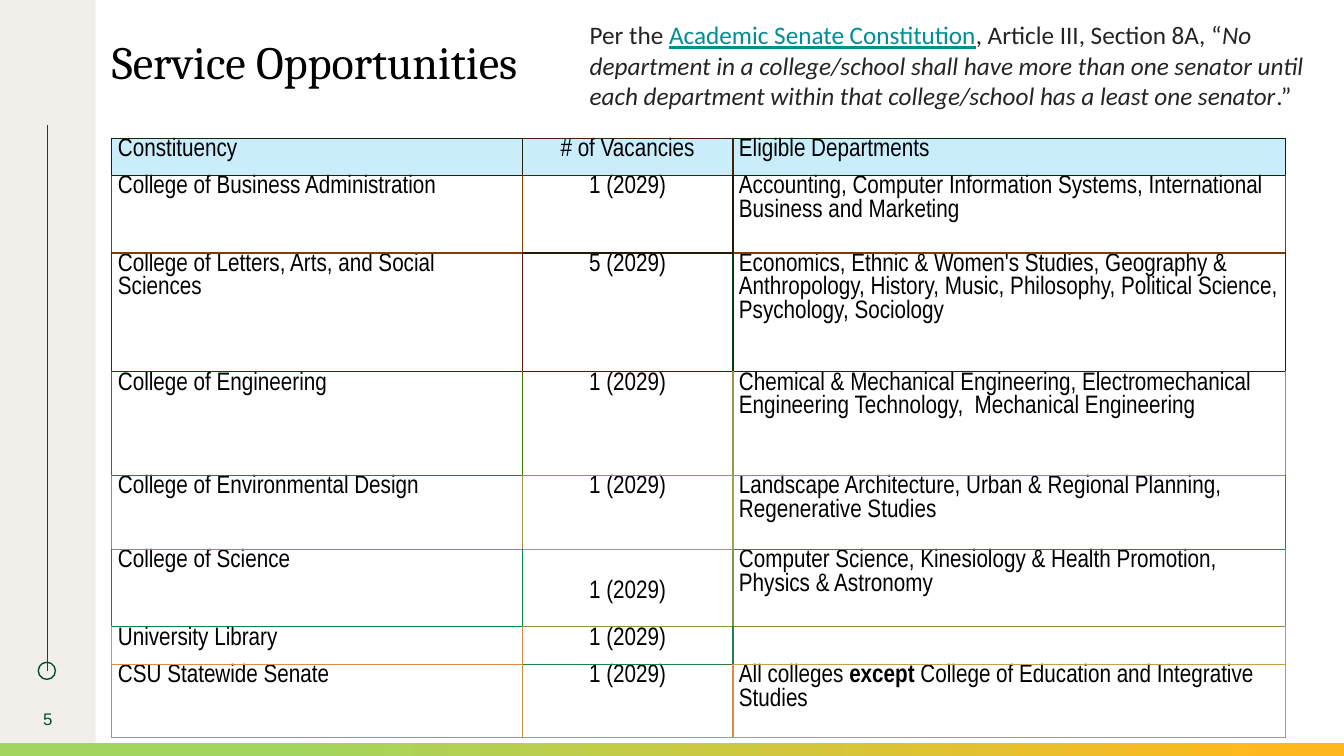
from lxml import etree
from pptx import Presentation
from pptx.dml.color import RGBColor
from pptx.enum.shapes import MSO_CONNECTOR, MSO_SHAPE
from pptx.enum.text import MSO_ANCHOR, MSO_AUTO_SIZE, PP_ALIGN
from pptx.oxml.ns import qn
from pptx.util import Inches, Pt

LEFT, CENTER = PP_ALIGN.LEFT, PP_ALIGN.CENTER
TOP, MIDDLE = MSO_ANCHOR.TOP, MSO_ANCHOR.MIDDLE
GROW = MSO_AUTO_SIZE.SHAPE_TO_FIT_TEXT
RECT, OVAL = MSO_SHAPE.RECTANGLE, MSO_SHAPE.OVAL
STRAIGHT = MSO_CONNECTOR.STRAIGHT
TITLE_ONLY = 5

COLORS = {
    "black": "000000", "white": "FFFFFF", "sand": "F2EEE9", "green": "005030",
    "gold": "FFB81C", "lime": "A3D65E", "header": "CAEDFB", "ink": "242424",
    "link": "008E95",
}
FORMATS = {
    "title": {"name": "Cambria", "size": Pt(33), "color": "black"},
    "number": {"name": "Arial", "size": Pt(12), "color": "green"},
    "cell": {"name": "Arial Narrow", "size": Pt(18), "bold": False, "color": "black"},
    "note": {"name": "Calibri", "size": Pt(18), "color": "ink"},
}


class SlideBuilder:
    """Holds the style and the current slide."""

    def __init__(self, slide):
        self.slide = slide
        self.shapes = slide.shapes

    def rgb(self, color):
        return RGBColor.from_string(COLORS[color])

    def set_text(self, frame, runs, style, align=LEFT, anchor=TOP, margins=(0, 0), **options):
        """Fill a text frame or cell with (text, extra format) runs."""
        side, end = (Inches(margin) for margin in margins)
        settings = {"margin_left": side, "margin_right": side, "margin_top": end,
                    "margin_bottom": end, "vertical_anchor": anchor, **options}
        for attribute, value in settings.items():
            setattr(frame, attribute, value)
        text_frame = getattr(frame, "text_frame", frame)
        text_frame.word_wrap = True
        paragraph = text_frame.paragraphs[0]
        paragraph.alignment = align
        for text, extra in runs:
            if text.startswith("\n"):
                paragraph.add_line_break()
            run = paragraph.add_run()
            run.text = text.lstrip("\n")
            self.format_font(run.font, {**FORMATS[style], **extra})
        return paragraph

    def format_font(self, font, values):
        for attribute, value in values.items():
            if attribute == "color":
                font.color.rgb = self.rgb(value)
            else:
                setattr(font, attribute, value)

    def title(self, box, text):
        placeholder = self.shapes.title
        for attribute, value in zip(("left", "top", "width", "height"), box):
            setattr(placeholder, attribute, Inches(value))
        paragraph = self.set_text(placeholder.text_frame, [(text, {})], "title", auto_size=GROW)
        paragraph.line_spacing = 0.9

    def shape(self, kind, box, fill=None, line=None):
        shape = self.shapes.add_shape(kind, *map(Inches, box))
        shape.shadow.inherit = False
        if fill:
            shape.fill.solid()
            shape.fill.fore_color.rgb = self.rgb(fill)
        else:
            shape.fill.background()
        if line:
            shape.line.color.rgb = self.rgb(line)
            shape.line.width = Pt(1)
        else:
            shape.line.fill.background()
        return shape

    def gradient_bar(self, box, stops):
        bar = self.shape(RECT, box)
        bar.fill.gradient()
        bar.fill.gradient_angle = 180
        for stop, (position, color) in zip(bar.fill.gradient_stops, stops):
            stop.position = position
            stop.color.rgb = self.rgb(color)

    def line(self, start, end, color):
        line = self.shapes.add_connector(STRAIGHT, *map(Inches, (*start, *end)))
        line.line.color.rgb = self.rgb(color)
        line.line.width = Pt(1)
        etree.SubElement(line._element.spPr, qn("a:effectLst"))

    def text(self, box, runs, style, **options):
        text_box = self.shapes.add_textbox(*map(Inches, box))
        self.set_text(text_box.text_frame, runs, style, **options)

    def borders(self, cell, sides):
        properties = cell._tc.get_or_add_tcPr()
        for side, color in sides.items():
            border = etree.SubElement(properties, qn(f"a:ln{side}"), w=str(Pt(1)))
            fill = etree.SubElement(border, qn("a:solidFill"))
            etree.SubElement(fill, qn("a:srgbClr"), val=color)

    def table(self, corner, widths, heights, rows, edges):
        """Each cell's edge colour runs right and below, and on the outer left and top."""
        size = (sum(widths), sum(heights))
        table = self.shapes.add_table(len(rows), len(widths),
                                      *map(Inches, (*corner, *size))).table
        for column, width in zip(table.columns, widths):
            column.width = Inches(width)
        for r, (row, height) in enumerate(zip(rows, heights)):
            table.rows[r].height = Inches(height)
            for c, content in enumerate(row):
                cell = table.cell(r, c)
                own = edges[r][c]
                self.borders(cell, {"L": edges[r][max(c - 1, 0)], "R": own,
                                    "T": edges[max(r - 1, 0)][c], "B": own})
                if r == 0:
                    cell.fill.solid()
                    cell.fill.fore_color.rgb = self.rgb("header")
                else:
                    cell.fill.background()
                runs = [(content, {})] if isinstance(content, str) else content
                self.set_text(cell, runs, "cell", align=CENTER if c == 1 else LEFT,
                              margins=(0.06, 0))


VACANCIES = [
    ("Constituency", "# of Vacancies", "Eligible Departments"),
    ("College of Business Administration", "1 (2029)",
     "Accounting, Computer Information Systems, International Business and Marketing"),
    ("College of Letters, Arts, and Social Sciences", "5 (2029)",
     "Economics, Ethnic & Women's Studies, Geography & Anthropology, History, Music, "
     "Philosophy, Political Science, Psychology, Sociology"),
    ("College of Engineering", "1 (2029)",
     "Chemical & Mechanical Engineering, Electromechanical Engineering Technology, "
     " Mechanical Engineering"),
    ("College of Environmental Design", "1 (2029)",
     "Landscape Architecture, Urban & Regional Planning, Regenerative Studies"),
    ("College of Science", "\n1 (2029)",
     "Computer Science, Kinesiology & Health Promotion,  Physics & Astronomy"),
    ("University Library", "1 (2029)", []),
    ("CSU Statewide Senate", "1 (2029)",
     [("All colleges ", {}), ("except", {"bold": True}),
      (" College of Education and Integrative Studies", {})]),
]
EDGES = [
    ("201F07", "402307", "002C07"), ("803E07", "201A07", "803A07"),
    ("601807", "003D07", "401507"), ("407709", "A0904A", "60AF4A"),
    ("A08E4A", "A0A44A", "20884A"), ("00894A", "80974A", "A0814A"),
    ("E08D4A", "20804A", "C0A24A"), ("C08E4A", "E08A4A", "80BC4A"),
]
SENATE_RULE = [
    ("Per the ", {}),
    ("Academic Senate Constitution", {"color": "link", "underline": True}),
    (", Article III, Section 8A, “", {}),
    ("No department in a college/school shall have more than one senator until each "
     "department within that college/school has a least one senator", {"italic": True}),
    (".”", {}),
]


def main():
    deck = Presentation()
    deck.slide_width, deck.slide_height = Inches(13.33), Inches(7.5)
    page = SlideBuilder(deck.slides.add_slide(deck.slide_layouts[TITLE_ONLY]))

    # Side band and bottom bar
    page.shape(RECT, (0, 0, 0.95, 7.5), fill="sand")
    page.line((0.47, 1.24), (0.47, 6.66), "green")
    page.shape(OVAL, (0.38, 6.57, 0.17, 0.17), line="green")
    page.gradient_bar((0, 7.37, 13.33, 0.13), [(0.05, "gold"), (0.79, "lime")])

    # Title and slide number
    page.title((1.11, 0.39, 9.05, 0.5), "Service Opportunities")
    page.text((0, 6.93, 0.95, 0.4), [("5", {})], "number", align=CENTER,
              anchor=MIDDLE, margins=(0.1, 0.05))

    # Vacancies by constituency
    page.table((1.11, 1.37), (4.07, 2.09, 5.48),
               (0.37, 0.77, 1.18, 1.03, 0.73, 0.77, 0.37, 0.73), VACANCIES, EDGES)

    # Rule quoted from the constitution
    rule_box = page.shape(RECT, (5.75, 0.19, 7.58, 0.91), fill="white")
    page.set_text(rule_box.text_frame, SENATE_RULE, "note", anchor=MIDDLE,
                  margins=(0.1, 0), auto_size=GROW)

    deck.save("out.pptx")


if __name__ == "__main__":
    main()
